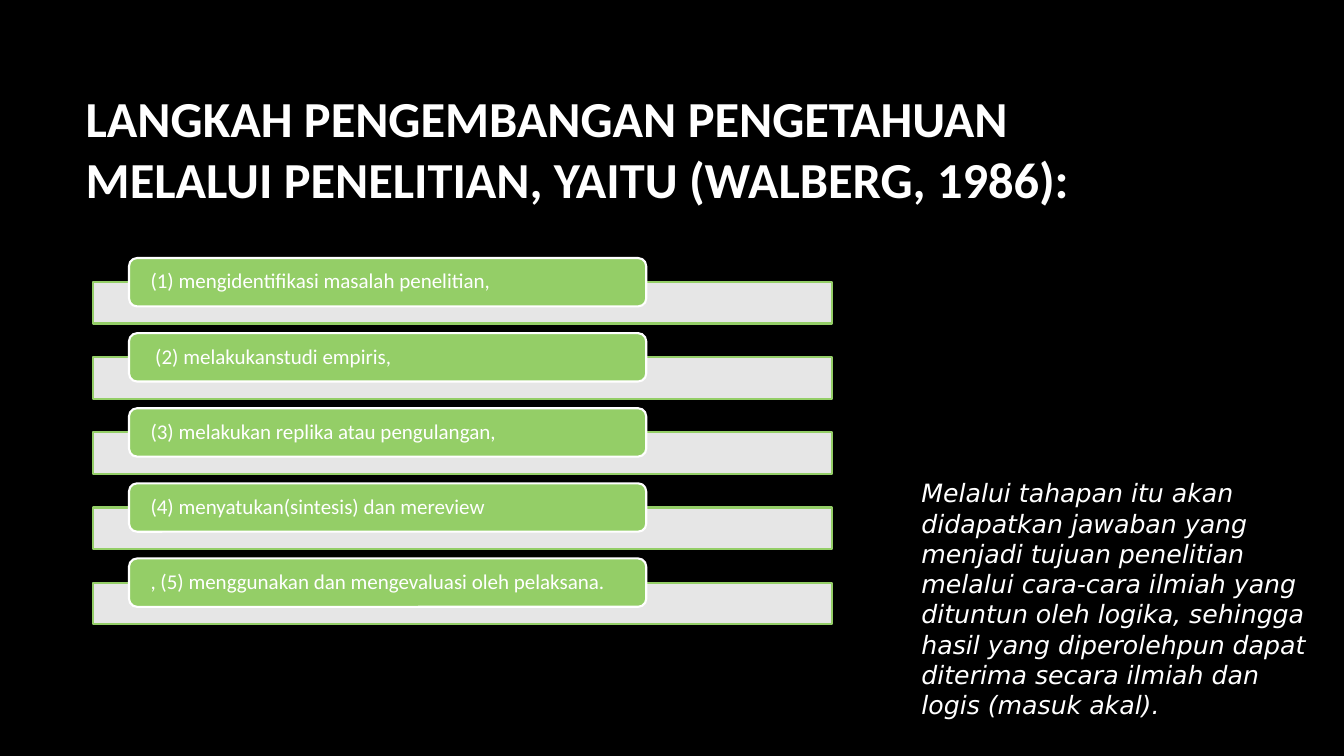
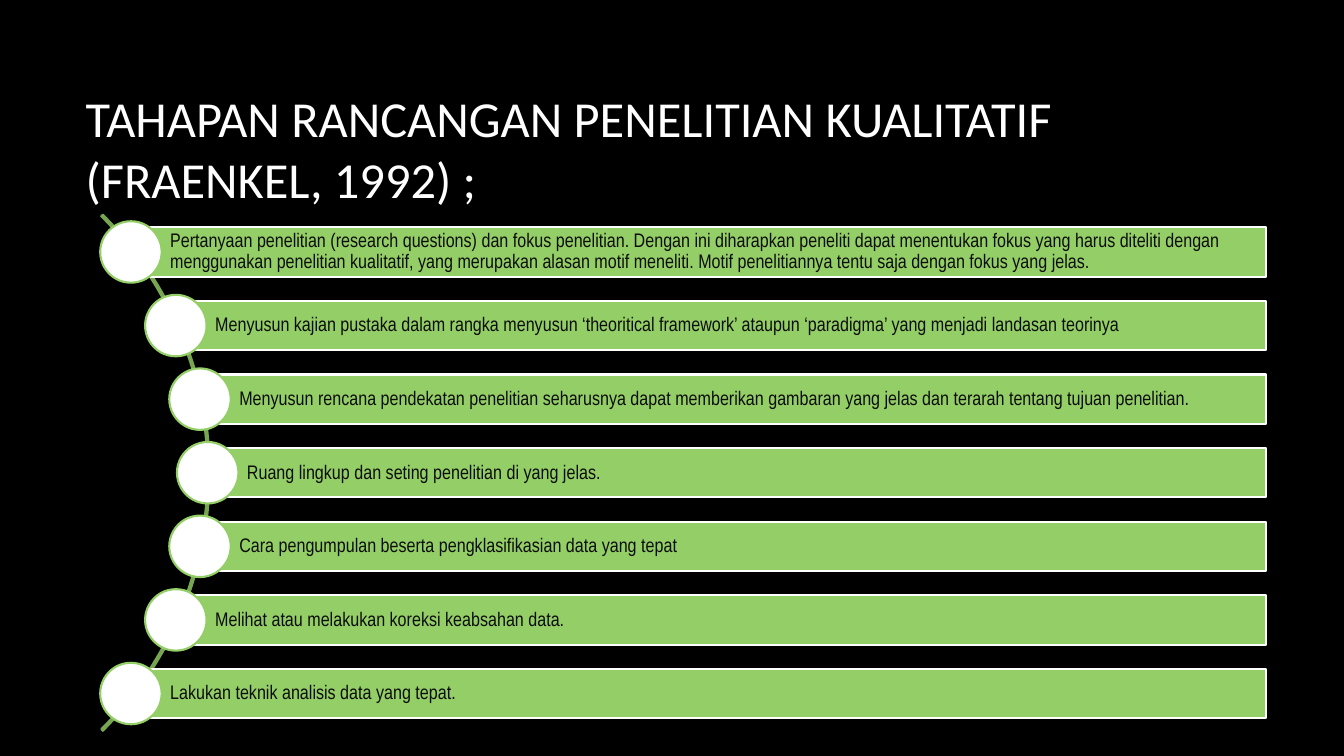
"""Build two slides on the steps of research and of qualitative design."""
import math

from lxml import etree
from pptx import Presentation, util as u
from pptx.dml import color
from pptx.enum import shapes, text
from pptx.oxml import ns

BLACK, WHITE, INK = "000000", "FFFFFF", "0D0D0D"
GREEN, DARK_GREEN = "94CE67", "77A552"

STEPS_TITLE = "LANGKAH PENGEMBANGAN PENGETAHUAN MELALUI PENELITIAN, YAITU (WALBERG, 1986):"
STEPS = [
    "(1) mengidentifikasi masalah penelitian,",
    " (2) melakukanstudi empiris,",
    "(3) melakukan replika atau pengulangan,",
    "(4) menyatukan(sintesis) dan mereview",
    ", (5) menggunakan dan mengevaluasi oleh pelaksana.",
]
CONCLUSION = [
    "Melalui tahapan itu akan didapatkan jawaban yang",
    "menjadi tujuan penelitian melalui cara-cara ilmiah yang dituntun oleh logika, "
    "sehingga hasil yang diperolehpun dapat diterima secara ilmiah dan logis (masuk akal).",
]
STAGES_TITLE = "TAHAPAN RANCANGAN PENELITIAN KUALITATIF (FRAENKEL, 1992) ;"
STAGES = [
    "Pertanyaan penelitian (research questions) dan fokus penelitian. Dengan ini diharapkan "
    "peneliti dapat menentukan fokus yang harus diteliti dengan menggunakan penelitian "
    "kualitatif, yang merupakan alasan motif meneliti. Motif penelitiannya tentu saja dengan "
    "fokus yang jelas.",
    "Menyusun kajian pustaka dalam rangka menyusun ‘theoritical framework’ ataupun "
    "‘paradigma’ yang menjadi landasan teorinya",
    "Menyusun rencana pendekatan penelitian seharusnya dapat memberikan gambaran yang jelas "
    "dan terarah tentang tujuan penelitian.",
    "Ruang lingkup dan seting penelitian di yang jelas.",
    "Cara pengumpulan beserta pengklasifikasian data yang tepat",
    "Melihat atau melakukan koreksi keabsahan data.",
    "Lakukan teknik analisis data yang tepat.",
]


def rgb(value):
    return color.RGBColor.from_string(value)


def write(shape, paragraphs, font="Calibri", size=15, ink=WHITE, bold=False, italic=False,
          anchor=text.MSO_ANCHOR.MIDDLE, insets=(0.1, 0.05, 0.1, 0.05), spacing=None):
    frame = shape.text_frame
    frame.word_wrap = True
    frame.auto_size = text.MSO_AUTO_SIZE.NONE
    frame.vertical_anchor = anchor
    (frame.margin_left, frame.margin_top,
     frame.margin_right, frame.margin_bottom) = map(u.Inches, insets)
    for index, words in enumerate(paragraphs):
        paragraph = frame.add_paragraph() if index else frame.paragraphs[0]
        paragraph.alignment = text.PP_ALIGN.LEFT
        paragraph.line_spacing = spacing
        run = paragraph.add_run()
        run.text = words
        run.font.name, run.font.size = font, u.Pt(size)
        run.font.bold, run.font.italic = bold, italic
        run.font.color.rgb = rgb(ink)


def add_shape(slide, kind, box, fill, line, opacity=100):
    shape = slide.shapes.add_shape(kind, *map(u.Inches, box))
    shape.shadow.inherit = False
    shape.fill.solid()
    shape.fill.fore_color.rgb = rgb(fill)
    shape.line.color.rgb = rgb(line)
    shape.line.width = u.Pt(1.5)
    if opacity < 100:
        fill_color = shape.fill._xPr.find(ns.qn("a:solidFill"))[0]
        etree.SubElement(fill_color, ns.qn("a:alpha"), val=str(opacity * 1000))
    return shape


def add_slide(presentation, title, bold=False):
    slide = presentation.slides.add_slide(presentation.slide_layouts[5])
    shape = slide.shapes.title
    shape.left, shape.top, shape.width, shape.height = map(u.Inches, (0.75, 0.67, 11.08, 1.59))
    write(shape, [title], size=36, bold=bold)
    return slide


def add_steps(presentation):
    slide = add_slide(presentation, STEPS_TITLE, bold=True)
    top, pitch = 2.56, 0.745
    for index, step in enumerate(STEPS):
        y = top + index * pitch
        add_shape(slide, shapes.MSO_SHAPE.RECTANGLE, (0.92, y + 0.24, 7.33, 0.41),
                  WHITE, GREEN, opacity=90)
        label = add_shape(slide, shapes.MSO_SHAPE.ROUNDED_RECTANGLE, (1.28, y, 5.13, 0.48),
                          GREEN, WHITE)
        write(label, [step], insets=(0.19, 0, 0.19, 0), spacing=0.9)
    conclusion = slide.shapes.add_textbox(*map(u.Inches, (9.04, 4.69, 4.11, 2.52)))
    write(conclusion, CONCLUSION, font="DejaVu Sans", size=18, italic=True,
          anchor=text.MSO_ANCHOR.TOP)


def add_stages(presentation):
    slide = add_slide(presentation, STAGES_TITLE)
    middle, pitch, right = 4.69, 0.73, 12.56
    bar_height, dot, radius, apex = 0.49, 0.61, 3.53, 2.06
    arc = add_shape(slide, shapes.MSO_SHAPE.BLOCK_ARC, (-5.16, 1.07, 7.24, 7.24),
                    DARK_GREEN, DARK_GREEN)
    for index, value in enumerate((189, 27, 0.003)):
        arc.adjustments[index] = value
    for index, stage in enumerate(STAGES):
        offset = (index - (len(STAGES) - 1) / 2) * pitch
        x = apex - radius + math.sqrt(radius ** 2 - offset ** 2)
        y = middle + offset
        bar = add_shape(slide, shapes.MSO_SHAPE.RECTANGLE,
                        (x, y - bar_height / 2, right - x, bar_height), GREEN, WHITE)
        write(bar, [stage], font="Arial Narrow", size=14, ink=INK,
              insets=(0.39, 0.04, 0.04, 0.04), spacing=0.9)
        add_shape(slide, shapes.MSO_SHAPE.OVAL, (x - dot / 2, y - dot / 2, dot, dot),
                  WHITE, GREEN)


def main():
    presentation = Presentation()
    presentation.slide_width, presentation.slide_height = u.Inches(13.33), u.Inches(7.5)
    background = presentation.slide_master.background.fill
    background.solid()
    background.fore_color.rgb = rgb(BLACK)
    add_steps(presentation)
    add_stages(presentation)
    presentation.save("out.pptx")


if __name__ == "__main__":
    main()
